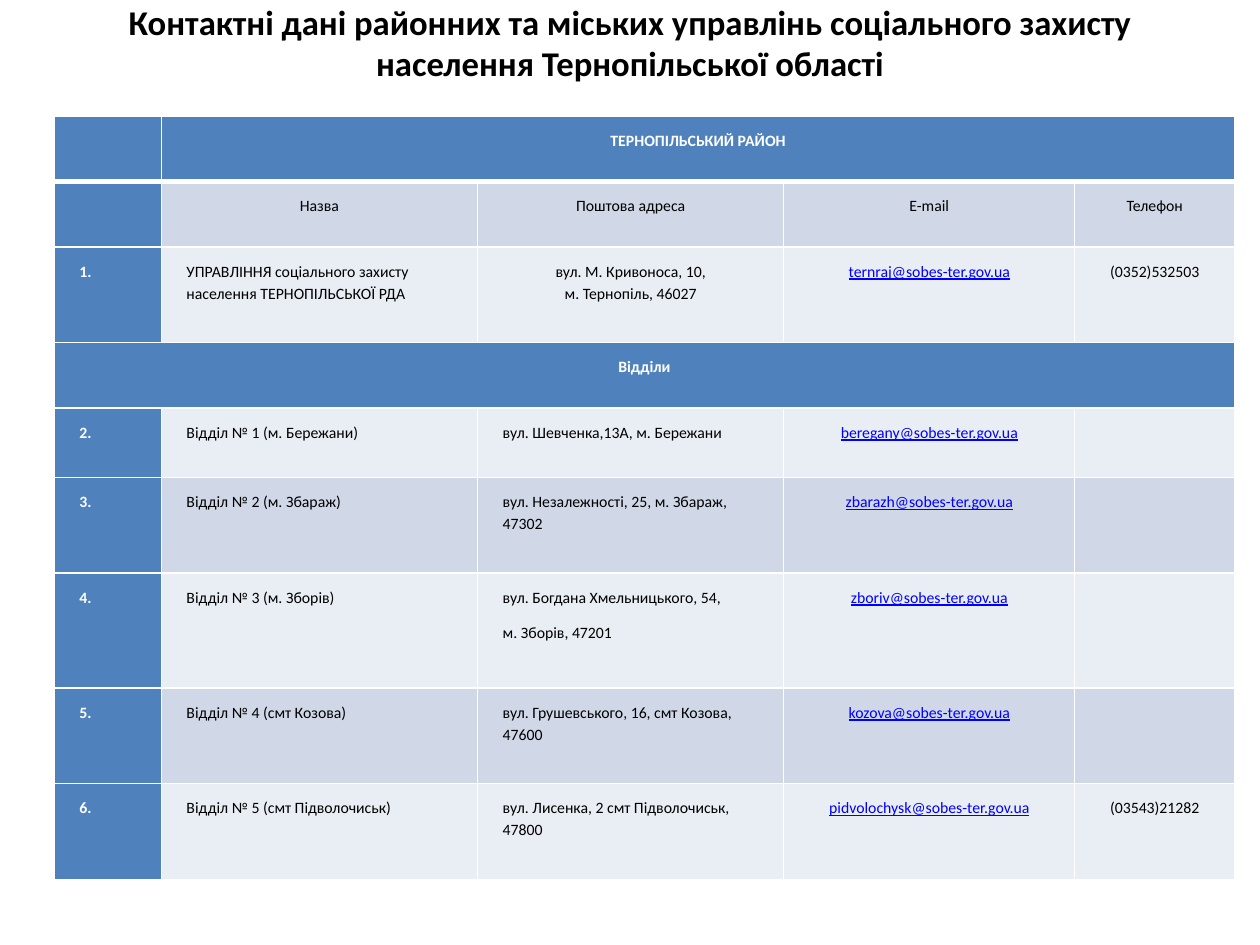
from dataclasses import dataclass

from lxml.etree import SubElement
from pptx import Presentation
from pptx.dml.color import RGBColor
from pptx.enum.text import MSO_ANCHOR, PP_ALIGN
from pptx.oxml.ns import qn
from pptx.slide import Slide
from pptx.table import Table, _Cell
from pptx.util import Inches, Pt


@dataclass(frozen=True)
class Theme:
    font: str = "Calibri"
    title_size: float = 19.8
    body_size: float = 9
    black: str = "000000"
    white: str = "FFFFFF"
    header: str = "4F81BD"
    dark_band: str = "D0D8E8"
    light_band: str = "E9EDF4"
    link: str = "0000FF"


@dataclass(frozen=True)
class Entry:
    text: str = ""
    align: PP_ALIGN = PP_ALIGN.LEFT
    color: str = "000000"
    bold: bool = False
    underline: bool = False


@dataclass(frozen=True)
class Office:
    name: str
    address: str
    email: str
    phone: str = ""
    address_align: PP_ALIGN = PP_ALIGN.LEFT


THEME = Theme()
TITLE = ("Контактні дані районних та міських управлінь соціального захисту "
         "населення Тернопільської області")
COLUMN_WIDTHS = (0.85, 2.51, 2.43, 2.31, 1.27)
ROW_HEIGHTS = (0.52, 0.52, 0.76, 0.52, 0.55, 0.76, 0.91, 0.76, 0.76)
DISTRICT_ROW, LABEL_ROW, MAIN_ROW, SECTION_ROW = range(4)
LABELS = ("Назва", "Поштова адреса", "E-mail", "Телефон")
OFFICES = (
    Office("УПРАВЛІННЯ соціального захисту населення ТЕРНОПІЛЬСЬКОЇ РДА",
           "вул. М. Кривоноса, 10,\nм. Тернопіль, 46027",
           "ternraj@sobes-ter.gov.ua", "(0352)532503", PP_ALIGN.CENTER),
    Office("Відділ № 1 (м. Бережани)", "вул. Шевченка,13А, м. Бережани",
           "beregany@sobes-ter.gov.ua"),
    Office("Відділ № 2 (м. Збараж)", "вул. Незалежності, 25, м. Збараж, 47302",
           "zbarazh@sobes-ter.gov.ua"),
    Office("Відділ № 3 (м. Зборів)",
           "вул. Богдана Хмельницького, 54,\nм. Зборів, 47201",
           "zboriv@sobes-ter.gov.ua"),
    Office("Відділ № 4 (смт Козова)", "вул. Грушевського, 16, смт Козова, 47600",
           "kozova@sobes-ter.gov.ua"),
    Office("Відділ № 5 (смт Підволочиськ)",
           "вул. Лисенка, 2 смт Підволочиськ, 47800",
           "pidvolochysk@sobes-ter.gov.ua", "(03543)21282"),
)


def add_title(page: Slide) -> None:
    """Place the heading in the title placeholder."""
    title = page.shapes.title
    title.left, title.top = Inches(0.5), Inches(0.3)
    title.width, title.height = Inches(9), Inches(0.69)
    frame = title.text_frame
    frame.word_wrap = True
    frame.vertical_anchor = MSO_ANCHOR.MIDDLE
    frame.margin_top, frame.margin_bottom = Inches(0), Inches(0.62)
    frame.text = TITLE
    para = frame.paragraphs[0]
    para.alignment = PP_ALIGN.CENTER
    para.font.name = THEME.font
    para.font.size = Pt(THEME.title_size)
    para.font.bold = True
    para.font.color.rgb = RGBColor.from_string(THEME.black)


def set_borders(cell: _Cell, widths: dict[str, float]) -> None:
    """Draw white lines of the given point widths on the cell's sides."""
    properties = cell._tc.get_or_add_tcPr()
    for side, width in widths.items():
        line = SubElement(properties, qn(f"a:ln{side}"), w=str(Pt(width)))
        fill = SubElement(line, qn("a:solidFill"))
        SubElement(fill, qn("a:srgbClr"), val=THEME.white)


def write_cell(cell: _Cell, entry: Entry, gap: float) -> None:
    """Write an entry's lines into a cell, with a gap in points after each."""
    cell.margin_left = cell.margin_right = Inches(0.2)
    cell.margin_top = cell.margin_bottom = Inches(0.1)
    cell.text = entry.text
    for para in cell.text_frame.paragraphs:
        para.alignment = entry.align
        para.line_spacing = 1.15
        para.space_after = Pt(gap)
        font = para.font
        font.name = THEME.font
        font.size = Pt(THEME.body_size)
        font.bold = entry.bold
        font.underline = entry.underline
        font.color.rgb = RGBColor.from_string(entry.color)


def heading(text: str, align: PP_ALIGN = PP_ALIGN.CENTER) -> Entry:
    """Return a bold white entry."""
    return Entry(text, align, THEME.white, bold=True)


def office_entries(number: int, office: Office) -> list[Entry]:
    """Return the five entries of an office's row."""
    return [
        heading(f"{number}.", PP_ALIGN.LEFT),
        Entry(office.name),
        Entry(office.address, office.address_align),
        Entry(office.email, PP_ALIGN.CENTER, THEME.link, underline=True),
        Entry(office.phone, PP_ALIGN.CENTER),
    ]


def table_entries() -> list[list[Entry]]:
    """Return all entries of the table, row by row."""
    offices = [office_entries(number, office)
               for number, office in enumerate(OFFICES, 1)]
    return [
        [Entry(), heading("ТЕРНОПІЛЬСЬКИЙ РАЙОН")],
        [Entry()] + [Entry(label, PP_ALIGN.CENTER) for label in LABELS],
        offices[0],
        [heading("Відділи")],
        *offices[1:],
    ]


def cell_fill(row: int, column: int) -> str:
    """Return the fill colour for a place in the table."""
    if column == 0 or row in (DISTRICT_ROW, SECTION_ROW):
        return THEME.header
    return THEME.dark_band if row % 2 else THEME.light_band


def style_cells(table: Table) -> None:
    """Apply borders and fills to every cell."""
    for row in range(len(ROW_HEIGHTS)):
        for column in range(len(COLUMN_WIDTHS)):
            cell = table.cell(row, column)
            top = 3 if row == LABEL_ROW else 1
            bottom = 3 if row == DISTRICT_ROW else 1
            set_borders(cell, {"L": 1, "R": 1, "T": top, "B": bottom})
            cell.fill.solid()
            cell.fill.fore_color.rgb = RGBColor.from_string(cell_fill(row, column))


def add_contacts(page: Slide) -> None:
    """Build the table of offices."""
    table = page.shapes.add_table(
        len(ROW_HEIGHTS), len(COLUMN_WIDTHS), Inches(0.43), Inches(0.92),
        Inches(sum(COLUMN_WIDTHS)), Inches(sum(ROW_HEIGHTS))).table
    for column, width in zip(table.columns, COLUMN_WIDTHS):
        column.width = Inches(width)
    for row, height in zip(table.rows, ROW_HEIGHTS):
        row.height = Inches(height)
    style_cells(table)
    last = len(COLUMN_WIDTHS) - 1
    for row, first in ((DISTRICT_ROW, 1), (SECTION_ROW, 0)):
        table.cell(row, first).merge(table.cell(row, last))
    for row, entries in enumerate(table_entries()):
        gap = 7.5 if row > SECTION_ROW else 0
        for column, entry in enumerate(entries):
            write_cell(table.cell(row, column), entry, gap)


def main() -> None:
    """Build and save the deck."""
    deck = Presentation()
    deck.slide_width, deck.slide_height = Inches(10), Inches(7.5)
    page = deck.slides.add_slide(deck.slide_layouts[5])
    add_title(page)
    add_contacts(page)
    deck.save("out.pptx")


if __name__ == "__main__":
    main()
